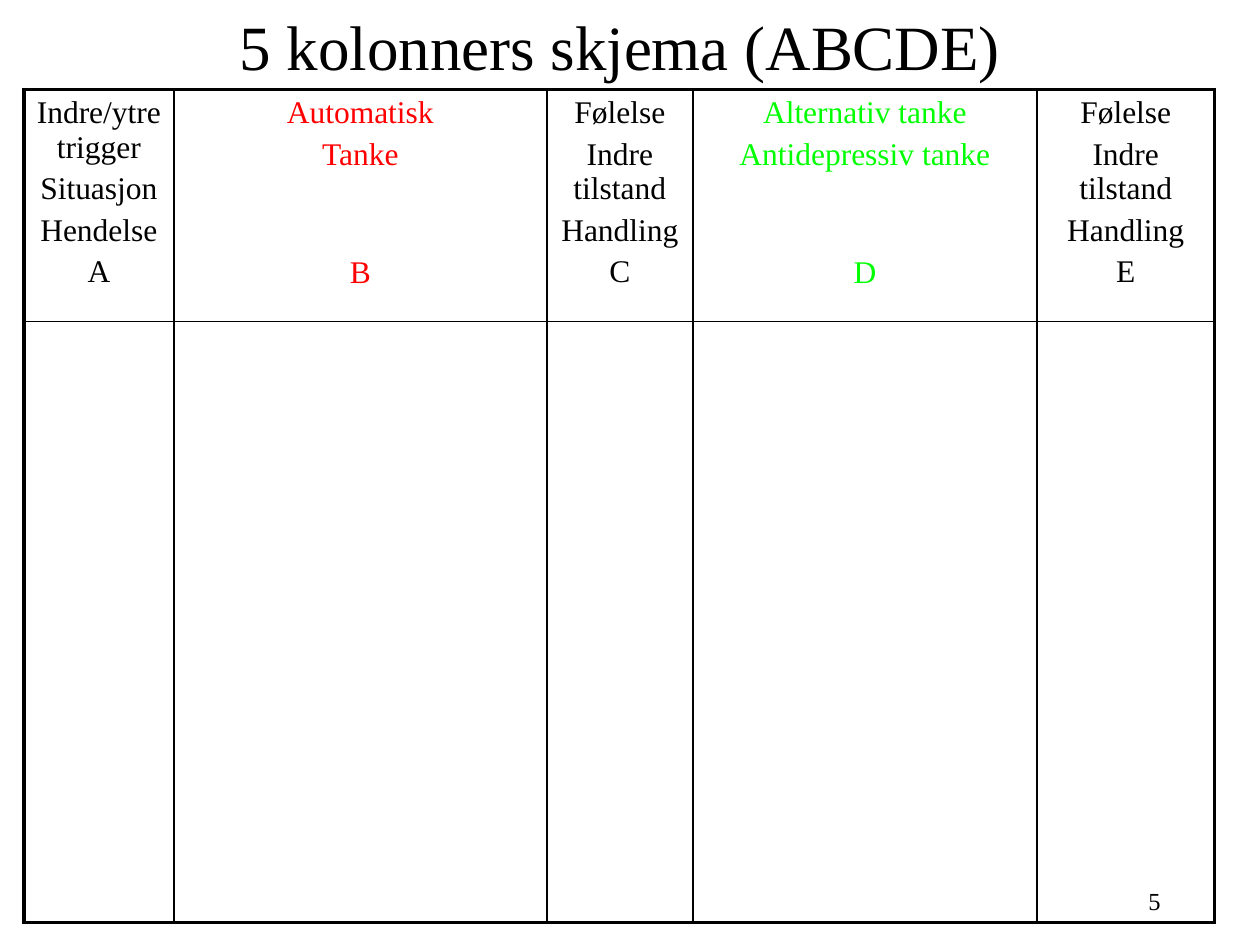
from lxml.etree import SubElement
from pptx import Presentation
from pptx.dml.color import RGBColor
from pptx.enum.text import MSO_ANCHOR, MSO_AUTO_SIZE, PP_ALIGN
from pptx.oxml.ns import qn
from pptx.util import Inches, Pt

BLACK = RGBColor(0x00, 0x00, 0x00)
RED = RGBColor(0xFF, 0x00, 0x00)
GREEN = RGBColor(0x00, 0xFF, 0x00)

COLUMN_WIDTHS = [1.19, 2.96, 1.16, 2.73, 1.41]
ROW_HEIGHTS = [1.84, 4.77]
REACTION = ["Følelse", "Indre tilstand", "Handling"]
HEADINGS = [
    (["Indre/ytre trigger", "Situasjon", "Hendelse"], "A", BLACK, 3.6),
    (["Automatisk", "Tanke"], "B", RED, 48),
    (REACTION, "C", BLACK, 3.6),
    (["Alternativ tanke", "Antidepressiv tanke"], "D", GREEN, 48),
    (REACTION, "E", BLACK, 3.6),
]


def write_line(paragraph, text, *, size=18, color=BLACK, align=PP_ALIGN.CENTER, before=0):
    paragraph.alignment = align
    paragraph.space_before = Pt(before)
    run = paragraph.add_run()
    run.text = text
    run.font.name = "Times New Roman"
    run.font.size = Pt(size)
    run.font.color.rgb = color


class FormSlide:
    """Slide with a title, a ruled form and a page number."""

    thin, thick = 1, 2.25

    def __init__(self, slide):
        self.slide = slide

    def text(self, wording, left, top, width, height, *, anchor=MSO_ANCHOR.TOP,
             fit=MSO_AUTO_SIZE.NONE, **style):
        box = self.slide.shapes.add_textbox(
            Inches(left), Inches(top), Inches(width), Inches(height))
        frame = box.text_frame
        frame.word_wrap = True
        frame.auto_size = fit
        frame.vertical_anchor = anchor
        write_line(frame.paragraphs[0], wording, **style)

    def border(self, cell, side, weight):
        line = SubElement(cell._tc.get_or_add_tcPr(), qn(f"a:{side}"), w=str(Pt(weight)))
        fill = SubElement(line, qn("a:solidFill"))
        SubElement(fill, qn("a:srgbClr"), val=str(BLACK))

    def rule(self, cell, row, column):
        outer_sides = {
            "lnL": column == 0,
            "lnR": column == len(COLUMN_WIDTHS) - 1,
            "lnT": row == 0,
            "lnB": row == len(ROW_HEIGHTS) - 1,
        }
        for side, outer in outer_sides.items():
            self.border(cell, side, self.thick if outer else self.thin)
        cell.fill.background()

    def heading(self, cell, lines, letter, color, letter_gap):
        frame = cell.text_frame
        for index, wording in enumerate(lines):
            paragraph = frame.add_paragraph() if index else frame.paragraphs[0]
            write_line(paragraph, wording, color=color, before=3.6)
        write_line(frame.add_paragraph(), letter, color=color, before=letter_gap)

    def form(self, left, top):
        form = self.slide.shapes.add_table(
            len(ROW_HEIGHTS), len(COLUMN_WIDTHS), Inches(left), Inches(top),
            Inches(sum(COLUMN_WIDTHS)), Inches(sum(ROW_HEIGHTS))).table
        form.first_row = form.horz_banding = False
        for column, width in zip(form.columns, COLUMN_WIDTHS):
            column.width = Inches(width)
        for row, height in zip(form.rows, ROW_HEIGHTS):
            row.height = Inches(height)
        for row in range(len(ROW_HEIGHTS)):
            for column in range(len(COLUMN_WIDTHS)):
                self.rule(form.cell(row, column), row, column)
        for column, heading in enumerate(HEADINGS):
            self.heading(form.cell(0, column), *heading)


def main():
    deck = Presentation()
    deck.slide_width, deck.slide_height = Inches(10), Inches(7.5)
    page = FormSlide(deck.slides.add_slide(deck.slide_layouts[6]))
    page.text("5", 7.06, 6.95, 2.25, 0.4, anchor=MSO_ANCHOR.MIDDLE,
              size=14, align=PP_ALIGN.RIGHT)
    page.form(0.19, 0.71)
    page.text("5 kolonners skjema (ABCDE)", 1.77, 0.01, 6.3, 0.7,
              fit=MSO_AUTO_SIZE.SHAPE_TO_FIT_TEXT, size=36)
    deck.save("out.pptx")


if __name__ == "__main__":
    main()
